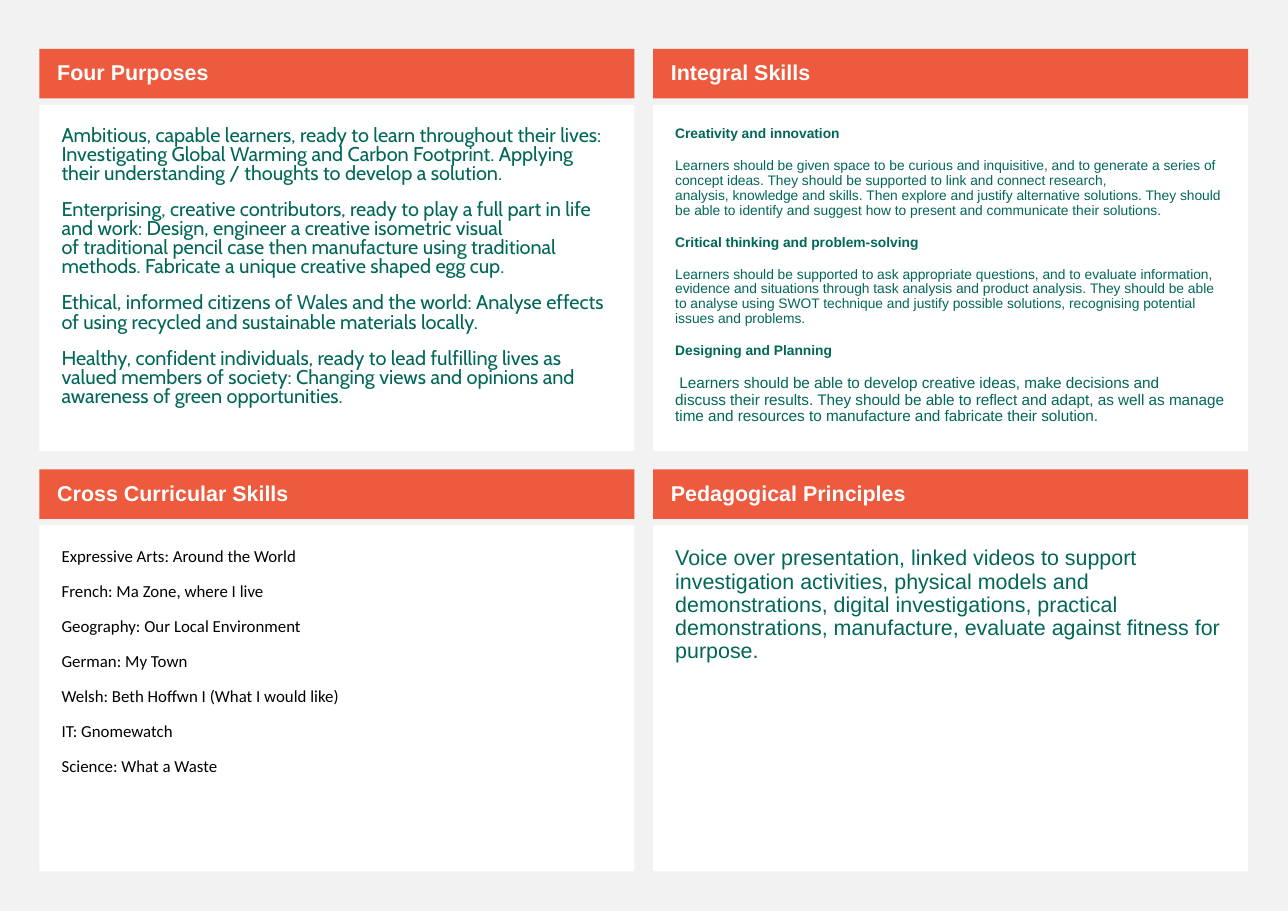
from pptx import Presentation
from pptx.dml.color import RGBColor
from pptx.enum.shapes import MSO_SHAPE
from pptx.enum.text import MSO_ANCHOR, PP_ALIGN
from pptx.util import Cm, Pt

RECTANGLE = MSO_SHAPE.RECTANGLE
TOP, MIDDLE = MSO_ANCHOR.TOP, MSO_ANCHOR.MIDDLE
LEFT = PP_ALIGN.LEFT

GREY = RGBColor(0xF2, 0xF2, 0xF2)
ORANGE = RGBColor(0xED, 0x5A, 0x3E)
GREEN = RGBColor(0x00, 0x67, 0x58)
WHITE = RGBColor(0xFF, 0xFF, 0xFF)
BLACK = RGBColor(0x00, 0x00, 0x00)

# Two-by-two grid of panels, in centimetres
GRID_LEFT, GRID_TOP = 0.91, 1.13
COLUMN_STEP, ROW_STEP = 14.15, 9.69
PANEL_WIDTH = 13.72
HEADER_HEIGHT, BODY_OFFSET, BODY_HEIGHT = 1.14, 1.29, 7.98
HEADER_INSETS = (0.41, 0.13, 0.25, 0.13)
BODY_INSETS = (0.51, 0.51, 0.51, 0.51)

# A tilde in the wording stands for a space that does not break
HARD_SPACE = chr(160)

FOUR_PURPOSES = [
    "Ambitious, capable learners, ready to learn throughout their lives: "
    "Investigating Global Warming and Carbon Footprint. Applying their "
    "understanding / thoughts to develop a solution.",
    "Enterprising, creative contributors, ready to play a full part in life "
    "and work: Design, engineer a creative~isometric~visual of~traditional "
    "pencil case then~manufacture using traditional methods.~Fabricate a "
    "unique~creative~shaped egg~cup.",
    "Ethical, informed citizens of Wales and the world: Analyse effects of "
    "using recycled and sustainable materials locally.",
    "Healthy, confident individuals, ready to lead fulfilling lives as valued "
    "members of society: Changing views and opinions and awareness of green "
    "opportunities.",
]
INTEGRAL_SKILLS = [
    ("Creativity and innovation",
     "Learners should be given space to be curious and inquisitive, and to "
     "generate a series of concept~ideas. They should be supported to link "
     "and connect research, analysis,~knowledge~and~skills.~Then explore and "
     "justify alternative solutions. They should be able to identify and "
     "suggest how to present~and communicate their solutions.", 9),
    ("Critical thinking and problem-solving",
     "Learners should be supported to ask appropriate~questions, and to "
     "evaluate information, evidence and situations through~task analysis and "
     "product analysis.~They should be able to analyse~using SWOT technique "
     "and justify possible solutions, recognising potential issues and "
     "problems.", 9),
    ("Designing and Planning",
     "~Learners should be able to develop creative ideas, make decisions and "
     "discuss~their~results. They should be able to reflect and adapt, as "
     "well as manage time and~resources to manufacture and~fabricate their "
     "solution.", 10),
]
CROSS_CURRICULAR = [
    "Expressive Arts: Around the World",
    "French: Ma Zone, where I live",
    "Geography: Our Local Environment",
    "German: My Town",
    "Welsh: Beth Hoffwn I (What I would like)",
    "IT: Gnomewatch",
    "Science: What a Waste",
]
PEDAGOGY = [
    "Voice over presentation, linked videos to support investigation "
    "activities, physical models and demonstrations, digital investigations, "
    "practical demonstrations, manufacture, evaluate against fitness for "
    "purpose.",
]


def add_box(page, left, top, height, fill, insets, anchor):
    """Draw a plain filled box and return its text frame."""
    box = page.shapes.add_shape(
        RECTANGLE, Cm(left), Cm(top), Cm(PANEL_WIDTH), Cm(height))
    box.shadow.inherit = False
    box.fill.solid()
    box.fill.fore_color.rgb = fill
    box.line.fill.background()
    frame = box.text_frame
    frame.word_wrap = True
    frame.vertical_anchor = anchor
    (frame.margin_left, frame.margin_top,
     frame.margin_right, frame.margin_bottom) = map(Cm, insets)
    return frame


def write(frame, text, font, size, color, bold=False, spacing=0.9):
    """Append one paragraph, using the empty first one when there is one."""
    para = frame.paragraphs[0] if not frame.text else frame.add_paragraph()
    para.text = text.replace("~", HARD_SPACE)
    para.alignment = LEFT
    para.line_spacing = spacing
    para.space_before = Pt(11)
    para.font.name = font
    para.font.size = Pt(size)
    para.font.bold = bold
    para.font.color.rgb = color


def add_panel(page, column, row, title):
    """Draw a header bar with a body below it; return the body's text frame."""
    left = GRID_LEFT + column * COLUMN_STEP
    top = GRID_TOP + row * ROW_STEP
    header = add_box(page, left, top, HEADER_HEIGHT, ORANGE, HEADER_INSETS, MIDDLE)
    write(header, title, "Arial", 14, WHITE, bold=True)
    return add_box(page, left, top + BODY_OFFSET, BODY_HEIGHT, WHITE, BODY_INSETS, TOP)


def main():
    deck = Presentation()
    deck.slide_width, deck.slide_height = Cm(29.7), Cm(21)
    page = deck.slides.add_slide(deck.slide_layouts[6])
    page.background.fill.solid()
    page.background.fill.fore_color.rgb = GREY

    # Top row
    purposes = add_panel(page, 0, 0, "Four Purposes")
    for text in FOUR_PURPOSES:
        write(purposes, text, "Cabin", 13, GREEN, spacing=0.8)

    skills = add_panel(page, 1, 0, "Integral Skills")
    for heading, text, size in INTEGRAL_SKILLS:
        write(skills, heading, "Arial", 9, GREEN, bold=True)
        write(skills, text, "Arial", size, GREEN)

    # Bottom row
    subjects = add_panel(page, 0, 1, "Cross Curricular Skills")
    for text in CROSS_CURRICULAR:
        write(subjects, text, "Calibri", 11, BLACK)

    principles = add_panel(page, 1, 1, "Pedagogical Principles")
    for text in PEDAGOGY:
        write(principles, text, "Arial", 14, GREEN)

    deck.save("out.pptx")


if __name__ == "__main__":
    main()
